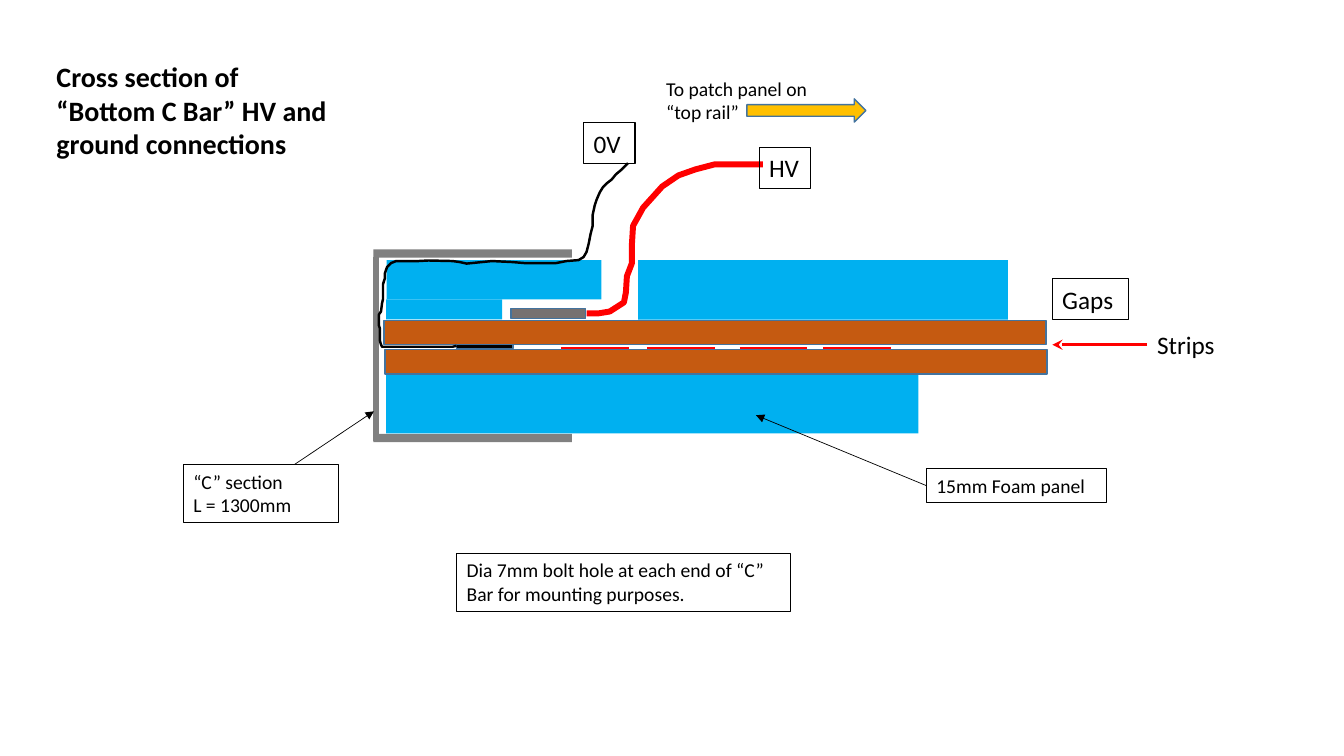
from dataclasses import dataclass
from typing import Optional

from lxml import etree
from pptx import Presentation
from pptx.dml.color import RGBColor
from pptx.enum.shapes import MSO_CONNECTOR, MSO_SHAPE
from pptx.enum.text import MSO_ANCHOR, MSO_AUTO_SIZE, PP_ALIGN
from pptx.oxml.ns import qn
from pptx.shapes.autoshape import Shape
from pptx.slide import Slide
from pptx.util import Pt

RECTANGLE = MSO_SHAPE.RECTANGLE
RIGHT_ARROW = MSO_SHAPE.RIGHT_ARROW
STRAIGHT = MSO_CONNECTOR.STRAIGHT
TOP = MSO_ANCHOR.TOP
LEFT = PP_ALIGN.LEFT
NO_AUTO_SIZE = MSO_AUTO_SIZE.NONE
TITLE_ONLY_LAYOUT = 5
LEFT_SIDE = 1

Point = tuple[float, float]


@dataclass(frozen=True)
class Theme:
    font: str = "Calibri"
    title_size: float = 20
    label_size: float = 18
    note_size: float = 14
    black: str = "000000"
    white: str = "FFFFFF"
    red: str = "FF0000"
    bar: str = "808080"
    foam: str = "00B0F0"
    gap: str = "C55A11"
    connector: str = "767171"
    arrow: str = "FFC000"
    outline: str = "43739E"


THEME = Theme()


@dataclass(frozen=True)
class Block:
    left: float
    top: float
    width: float
    height: float
    fill: str
    outline: Optional[str] = None
    preset: MSO_SHAPE = RECTANGLE


@dataclass(frozen=True)
class Label:
    text: str
    left: float
    top: float
    width: float
    height: float
    size: float
    framed: bool = True


@dataclass(frozen=True)
class Line:
    start: Point
    end: Point
    color: str
    weight: float
    head: Optional[str] = None
    source: Optional[str] = None


@dataclass(frozen=True)
class Wire:
    points: list[Point]
    color: str
    weight: float


TITLE = Label("Cross section of “Bottom C Bar” HV and ground connections",
              33.1, 38.9, 209.5, 79.9, THEME.title_size, False)

BLOCKS = [
    Block(265.7, 182.9, 5.8, 132.5, THEME.bar, THEME.white),
    Block(266.8, 178.2, 141.8, 5.8, THEME.bar),
    Block(266.8, 310, 141.8, 5.8, THEME.bar),
    Block(455.8, 185.8, 264.2, 42.5, THEME.foam),
    Block(276.2, 185.8, 153.4, 28.1, THEME.foam),
    Block(275.8, 213.8, 82.8, 14.4, THEME.foam),
    Block(274.3, 229, 473, 17.3, THEME.gap, THEME.outline),
    Block(275.8, 267.1, 380.2, 42.5, THEME.foam),
    Block(365, 220.3, 53.3, 7.2, THEME.connector, THEME.outline),
    Block(326.2, 246.2, 40.3, 2.9, THEME.black, THEME.outline),
    Block(275, 249.8, 473, 17.3, THEME.gap, THEME.outline),
    Block(533.5, 70.6, 85, 16.6, THEME.arrow, THEME.outline, RIGHT_ARROW),
]

LABELS = {
    "gaps": Label("Gaps", 751.7, 199.2, 54.7, 29.1, THEME.label_size),
    "section": Label("“C” section\nL = 1300mm", 131, 331.9, 110.9, 41.2, THEME.note_size),
    "foam": Label("15mm Foam panel", 661.7, 334.8, 128.9, 24.2, THEME.note_size),
    "strips": Label("Strips", 819.4, 231.7, 59.8, 29.1, THEME.label_size, False),
    "high voltage": Label("HV", 542.2, 105.6, 36.7, 29.1, THEME.label_size),
    "ground": Label("0V", 416.9, 87.8, 36.7, 29.1, THEME.label_size),
    "bolt hole": Label("Dia 7mm bolt hole at each end of “C” Bar for mounting purposes.",
                       326.2, 395.3, 238.3, 41.2, THEME.note_size),
    "patch panel": Label("To patch panel on “top rail”",
                         468.7, 51.1, 128.2, 41.2, THEME.note_size, False),
}

STRIP_LENGTH = 48.2
STRIP_TOP = 248.4
STRIP_LEFTS = [401, 462.2, 528.5, 588.2]

LINES = [
    Line((210.2, 331.9), (267.1, 293.8), THEME.black, 0.5, "triangle"),
    Line((819.4, 246.25), (751.7, 246.25), THEME.red, 2.5, "stealth", "strips"),
    Line((661.7, 346.9), (540, 296.6), THEME.black, 0.5, "triangle", "foam"),
] + [Line((left, STRIP_TOP), (left + STRIP_LENGTH, STRIP_TOP), THEME.red, 1.5)
     for left in STRIP_LEFTS]

HV_CABLE = Wire([
    (419, 223.9), (427, 223.9), (435.6, 222.5), (445.7, 216), (447.1, 208.8),
    (447.8, 197.3), (451.4, 187.9), (451.4, 174.2), (452.2, 161.3), (459.4, 148.3),
    (473, 133.2), (484.6, 125.3), (496.8, 121), (510.5, 117.4), (545, 117.4),
], THEME.red, 4.25)

GROUND_WIRE = Wire([
    (326.2, 247), (323.3, 247.7), (272.9, 247.7), (272.2, 246.2), (271.4, 243.4),
    (271.4, 234.7), (270.7, 232.6), (270.7, 224.6), (272.2, 222.5), (272.9, 216.7),
    (273.6, 213.8), (273.6, 203), (275, 198.7), (275, 195.1), (276.5, 190.8),
    (279.4, 187.9), (283, 186.5), (298.8, 186.5), (306, 186.1), (323.3, 186.5),
    (328.3, 187.2), (333.4, 188.3), (351.4, 186.5), (365.8, 187.2), (374.4, 187.9),
    (397.4, 187.9), (404.6, 186.5), (413.3, 185.8), (416.9, 183.6), (419, 180),
    (420.5, 174.2), (421.9, 167), (423.4, 161.3), (423.4, 153.4), (424.8, 146.9),
    (426.2, 142.6), (428.4, 137.5), (430.6, 133.9), (433.4, 131), (437, 128.2),
    (439.9, 124.6), (444.2, 121), (448.6, 116.6),
], THEME.black, 1.75)


def rgb(color: str) -> RGBColor:
    return RGBColor.from_string(color)


def write_text(shape: Shape, label: Label, bold: bool = False) -> None:
    text_frame = shape.text_frame
    text_frame.text = label.text
    text_frame.word_wrap = True
    text_frame.auto_size = NO_AUTO_SIZE
    text_frame.vertical_anchor = TOP
    for paragraph in text_frame.paragraphs:
        paragraph.alignment = LEFT
        paragraph.line_spacing = 1.0
        for run in paragraph.runs:
            run.font.name = THEME.font
            run.font.size = Pt(label.size)
            run.font.bold = bold
            run.font.color.rgb = rgb(THEME.black)


def draw_title(slide: Slide, label: Label) -> None:
    title = slide.shapes.title
    title.left, title.top = Pt(label.left), Pt(label.top)
    title.width, title.height = Pt(label.width), Pt(label.height)
    write_text(title, label, bold=True)


def draw_block(slide: Slide, block: Block) -> None:
    shape = slide.shapes.add_shape(block.preset, Pt(block.left), Pt(block.top),
                                   Pt(block.width), Pt(block.height))
    shape.shadow.inherit = False
    shape.fill.solid()
    shape.fill.fore_color.rgb = rgb(block.fill)
    if block.outline:
        shape.line.color.rgb = rgb(block.outline)
        shape.line.width = Pt(1)
    else:
        shape.line.fill.background()


def draw_label(slide: Slide, label: Label) -> Shape:
    shape = slide.shapes.add_textbox(Pt(label.left), Pt(label.top),
                                     Pt(label.width), Pt(label.height))
    write_text(shape, label)
    if label.framed:
        shape.line.color.rgb = rgb(THEME.black)
        shape.line.width = Pt(0.75)
    return shape


def draw_line(slide: Slide, line: Line, labels: dict[str, Shape]) -> None:
    connector = slide.shapes.add_connector(STRAIGHT, *map(Pt, line.start + line.end))
    if line.source:
        connector.begin_connect(labels[line.source], LEFT_SIDE)
    connector.line.color.rgb = rgb(line.color)
    connector.line.width = Pt(line.weight)
    properties = connector.element.spPr
    if line.head:
        etree.SubElement(properties.find(qn("a:ln")), qn("a:tailEnd"), type=line.head)
    etree.SubElement(properties, qn("a:effectLst"))


def draw_wire(slide: Slide, wire: Wire) -> None:
    start, *rest = [(Pt(x), Pt(y)) for x, y in wire.points]
    builder = slide.shapes.build_freeform(*start)
    builder.add_line_segments(rest, close=False)
    shape = builder.convert_to_shape()
    shape.shadow.inherit = False
    shape.fill.background()
    shape.line.color.rgb = rgb(wire.color)
    shape.line.width = Pt(wire.weight)


def main() -> None:
    presentation = Presentation()
    presentation.slide_width, presentation.slide_height = Pt(960), Pt(540)
    slide = presentation.slides.add_slide(presentation.slide_layouts[TITLE_ONLY_LAYOUT])
    draw_title(slide, TITLE)
    for block in BLOCKS:
        draw_block(slide, block)
    draw_wire(slide, HV_CABLE)
    labels = {name: draw_label(slide, label) for name, label in LABELS.items()}
    for line in LINES:
        draw_line(slide, line, labels)
    draw_wire(slide, GROUND_WIRE)
    presentation.save("out.pptx")


if __name__ == "__main__":
    main()
